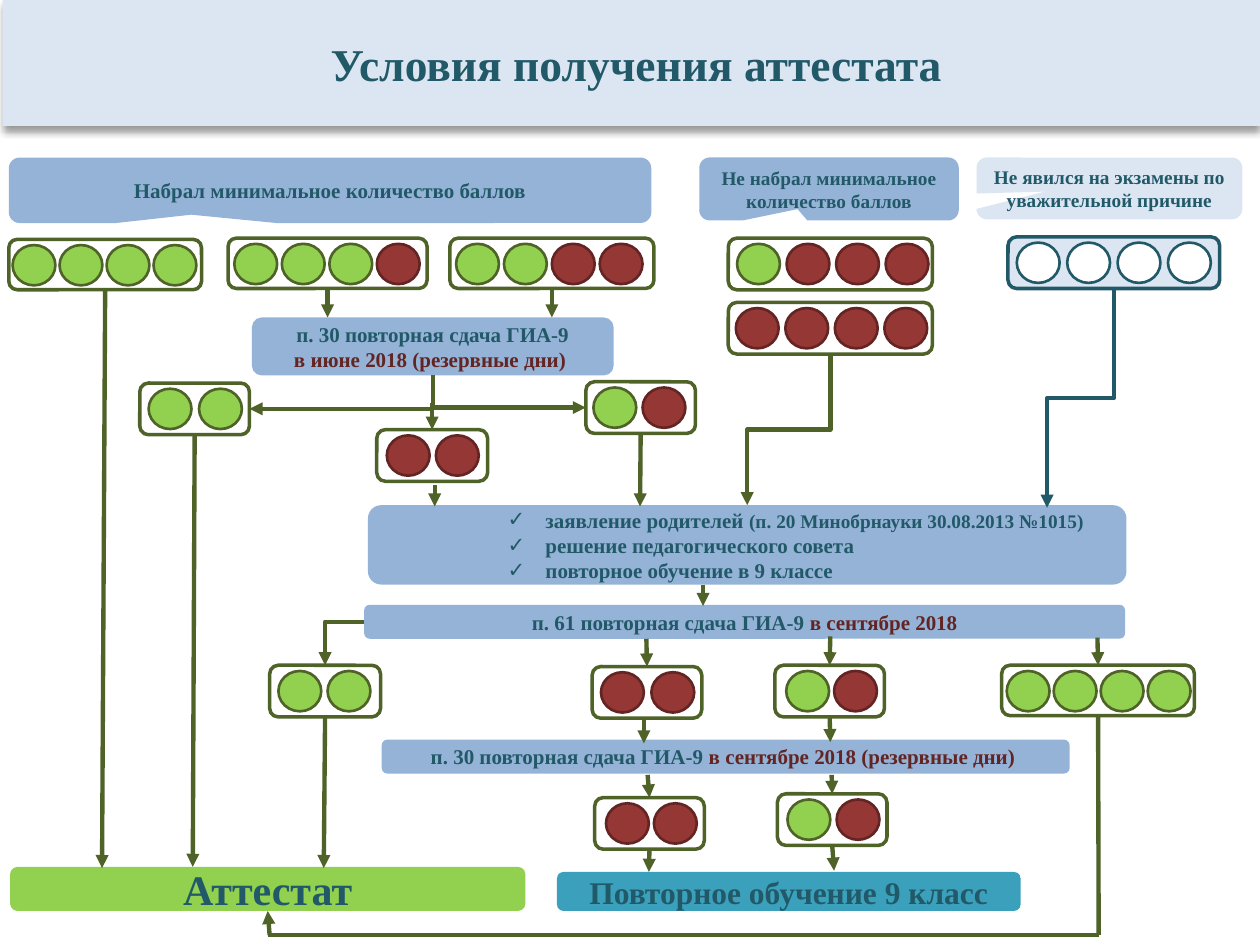
from itertools import product
from lxml.etree import SubElement
from pptx import Presentation
from pptx.dml.color import RGBColor
from pptx.enum.shapes import MSO_CONNECTOR, MSO_SHAPE
from pptx.enum.text import MSO_ANCHOR, PP_ALIGN
from pptx.oxml.ns import qn
from pptx.util import Inches, Pt

COLORS = {
    "pale": "DCE6F2", "blue": "95B3D7", "cyan": "3BA0BB", "green": "92D050",
    "olive": "4F6228", "red": "953735", "maroon": "632523", "teal": "215968",
    "white": "FFFFFF", "black": "000000",
}
RGB = {name: RGBColor.from_string(value) for name, value in COLORS.items()}
FONT = "Times New Roman"

presentation = Presentation()
presentation.slide_width, presentation.slide_height = Inches(10), Inches(7.5)
slide = presentation.slides.add_slide(presentation.slide_layouts[6])
CELL = presentation.slide_width / 100  # grid of 100 columns by 75 rows


def add_block(parent, kind, cells, fill=None, line=None, width=0):
    """Add a preset shape at (column, row, columns, rows) without a shadow."""
    shape = parent.shapes.add_shape(kind, *(round(value * CELL) for value in cells))
    shape.shadow.inherit = False
    if fill:
        shape.fill.solid()
        shape.fill.fore_color.rgb = RGB[fill]
    else:
        shape.fill.background()
    if line:
        shape.line.color.rgb = RGB[line]
        shape.line.width = Pt(width)
    else:
        shape.line.fill.background()
    return shape


def write_text(shape, paragraphs, align=PP_ALIGN.CENTER):
    """Fill a shape with paragraphs, each a list of (text, size, color) runs."""
    frame = shape.text_frame
    frame.word_wrap = True
    frame.vertical_anchor = MSO_ANCHOR.MIDDLE
    for index, runs in enumerate(paragraphs):
        paragraph = frame.add_paragraph() if index else frame.paragraphs[0]
        paragraph.alignment = align
        for text, size, color in runs:
            run = paragraph.add_run()
            run.text = text
            run.font.name, run.font.size, run.font.bold = FONT, Pt(size), True
            run.font.color.rgb = RGB[color]


# Title band
title = add_block(slide, MSO_SHAPE.RECTANGLE, (0.2, 0, 99.8, 10), "pale")
write_text(title, [[("Условия получения аттестата", 26, "teal")]])
title.text_frame.margin_left = Inches(0.18)
effects = title._element.spPr.find(qn("a:effectLst"))
shadow = SubElement(effects, qn("a:outerShdw"), blurRad=str(Pt(4)), dist=str(Pt(3)),
                    dir="5400000", algn="t", rotWithShape="0")
shadow_color = SubElement(shadow, qn("a:srgbClr"), val=COLORS["black"])
SubElement(shadow_color, qn("a:alpha"), val="40000")

# Callouts: cells, tip offset, fill, size, text
callouts = [
    ((0.7, 12.5, 51, 5.2), (-0.216, 0.373), "blue", 12,
     "Набрал минимальное количество баллов"),
    ((55.5, 12.5, 20.6, 5), (-0.121, 0.32), "blue", 11,
     "Не набрал минимальное количество баллов"),
    ((77.5, 12.5, 21.1, 4.9), (-0.243, 0.053), "pale", 11,
     "Не явился на экзамены по уважительной причине"),
]
for cells, tip, fill, size, text in callouts:
    callout = add_block(slide, MSO_SHAPE.ROUNDED_RECTANGULAR_CALLOUT, cells, fill)
    callout.adjustments[0], callout.adjustments[1] = tip
    write_text(callout, [[(text, size, "teal")]])

# Stages of the process: cells, fill, paragraphs
stages = [
    ((20, 25.2, 28.7, 4.6), "blue",
     [[("п. 30 повторная сдача ГИА-9", 12, "teal")],
      [("в июне 2018 (резервные дни) ", 12, "maroon")]]),
    ((28.9, 48, 60.4, 2.7), "blue",
     [[("п. 61 повторная сдача ГИА-9 ", 12, "teal"),
       ("в сентябре 2018", 12, "maroon")]]),
    ((30.3, 58.7, 54.6, 2.7), "blue",
     [[("п. 30 повторная сдача ГИА-9 ", 12, "teal"),
       ("в сентябре 2018 (резервные дни) ", 12, "maroon")]]),
    ((0.8, 68.8, 40.9, 3.5), "green", [[("Аттестат", 24, "teal")]]),
    ((44.2, 69.2, 36.8, 3.1), "cyan", [[("Повторное обучение 9 класс", 18, "teal")]]),
]
boxes = []
for cells, fill, paragraphs in stages:
    stage = add_block(slide, MSO_SHAPE.ROUNDED_RECTANGLE, cells, fill)
    write_text(stage, paragraphs)
    boxes.append(stage)

# Checklist of conditions
checklist = add_block(slide, MSO_SHAPE.ROUNDED_RECTANGLE, (29.2, 40.1, 60.2, 6.3), "blue")
write_text(checklist, [
    [("заявление родителей ", 12, "teal"),
     ("(п. 20 Минобрнауки 30.08.2013 №1015)", 11, "teal")],
    [("решение педагогического совета", 12, "teal")],
    [("повторное обучение в 9 классе", 12, "teal")],
], PP_ALIGN.LEFT)
for paragraph in checklist.text_frame.paragraphs:
    properties = paragraph._p.get_or_add_pPr()
    properties.set("marL", str(Inches(1.28)))
    properties.set("indent", str(Inches(-0.3)))
    SubElement(properties, qn("a:buFont"), typeface="Arial")
    SubElement(properties, qn("a:buChar"), char="✓")
boxes.append(checklist)

# Exam results: box cells, inset of the first mark, pitch, marks
# G is passed, R is failed, W is absent
MARKS = {"G": ("green", "olive"), "R": ("red", "maroon"), "W": ("white", "teal")}
results = [
    ((0.7, 19, 15.3, 4), 0.3, 3.73, "GGGG"),
    ((18.1, 18.9, 15.8, 4), 0.5, 3.77, "GGGR"),
    ((35.7, 18.9, 16.2, 4), 0.5, 3.8, "GGRR"),
    ((57.8, 18.9, 16.2, 4.1), 0.7, 3.93, "GRRR"),
    ((57.8, 24, 16.2, 4.1), 0.6, 3.93, "RRRR"),
    ((80, 18.8, 16.8, 4.1), 0.7, 4, "WWWW"),
    ((11.1, 30.4, 8.7, 4.1), 0.7, 4, "GG"),
    ((29.9, 34.1, 8.8, 4.1), 0.8, 3.9, "RR"),
    ((46.5, 30.3, 8.7, 4.1), 0.6, 3.9, "GR"),
    ((21.4, 52.8, 8.8, 4.1), 0.7, 3.9, "GG"),
    ((47, 52.9, 8.7, 4.1), 0.7, 4, "RR"),
    ((61.5, 52.8, 8.7, 4.1), 0.9, 3.8, "GR"),
    ((47.2, 63.3, 8.7, 4.1), 0.9, 3.8, "RR"),
    ((61.7, 63, 8.7, 4.1), 0.8, 3.9, "GR"),
    ((79.5, 52.8, 15.3, 4), 0.4, 3.73, "GGGG"),
]
for cells, inset, pitch, marks in results:
    group = slide.shapes.add_group_shape()
    absent = "W" in marks
    boxes.append(add_block(group, MSO_SHAPE.ROUNDED_RECTANGLE, cells,
                           "pale" if absent else None, "teal" if absent else "olive", 2))
    for index, mark in enumerate(marks):
        circle = (cells[0] + inset + index * pitch, cells[1] + 0.45, 3.4, 3.2)
        add_block(group, MSO_SHAPE.OVAL, circle, *MARKS[mark], 1.5)

# Links: start, end, and route: straight, down (starts vertically), side, step
links = [
    ((8.3, 23), (8.1, 68.9), "straight"), ((15.3, 34.7), (15.3, 68.8), "straight"),
    ((25.7, 57), (25.7, 68.9), "straight"), ((26, 22.9), (26, 25.2), "straight"),
    ((43.8, 22.9), (43.8, 25.2), "straight"), ((34.3, 32), (34.3, 34.3), "straight"),
    ((34.5, 38.5), (34.5, 40.2), "straight"), ((50.8, 34.6), (50.8, 40.2), "straight"),
    ((55.8, 46.4), (55.8, 48.1), "straight"), ((51.3, 50.7), (51.3, 52.9), "straight"),
    ((65.9, 50.5), (65.9, 52.6), "straight"), ((87.1, 50.6), (87.1, 52.8), "straight"),
    ((51.1, 57), (51.1, 59), "straight"), ((65.9, 56.9), (65.9, 58.9), "straight"),
    ((51.4, 61.5), (51.4, 63.4), "straight"), ((66, 61.5), (66, 63.2), "straight"),
    ((51.5, 67.2), (51.5, 69.2), "straight"), ((66.2, 67.1), (66.2, 69.1), "straight"),
    ((87.1, 56.9), (87.2, 74.2), "plain"), ((21.3, 74.2), (87.2, 74.2), "plain"),
    ((21.4, 74.2), (21.3, 72.3), "straight"),
    ((34.4, 29.8), (19.9, 32.4), "down"), ((34.4, 29.8), (46.5, 32.4), "down"),
    ((28.9, 49.4), (25.7, 52.8), "side"),
    ((65.9, 28.2), (59.3, 40.1), "step"), ((88.4, 22.9), (83.1, 40.3), "step"),
]
for start, end, route in links:
    kind = MSO_CONNECTOR.STRAIGHT if route in ("straight", "plain") else MSO_CONNECTOR.ELBOW
    connector = slide.shapes.add_connector(kind, *(round(v * CELL) for v in start + end))
    for box, site in product(boxes, range(4)):
        x = box.left + box.width * (0.5, 0, 0.5, 1)[site]
        y = box.top + box.height * (0, 0.5, 1, 0.5)[site]
        for point, join in ((start, connector.begin_connect), (end, connector.end_connect)):
            if max(abs(point[0] * CELL - x), abs(point[1] * CELL - y)) < 0.25 * CELL:
                join(box, site)
    connector.line.color.rgb = RGB["teal" if start[0] > 88 else "olive"]
    connector.line.width = Pt(2.5)
    properties = connector._element.spPr
    if route != "plain":
        SubElement(connector.line._get_or_add_ln(), qn("a:tailEnd"), type="triangle")
    SubElement(properties, qn("a:effectLst"))
    if route in ("down", "side"):
        properties.find(qn("a:prstGeom")).set("prst", "bentConnector2")
    if route in ("down", "step"):  # a quarter turn makes the link leave vertically
        across = connector.end_x - connector.begin_x
        middle_x = (connector.begin_x + connector.end_x) // 2
        middle_y = (connector.begin_y + connector.end_y) // 2
        width, height = abs(connector.end_y - connector.begin_y), abs(across)
        connector.left, connector.top = middle_x - width // 2, middle_y - height // 2
        connector.width, connector.height = width, height
        transform = properties.find(qn("a:xfrm"))
        transform.attrib.clear()
        transform.set("rot", "5400000")
        if across > 0:
            transform.set("flipV", "1")

presentation.save("out.pptx")
